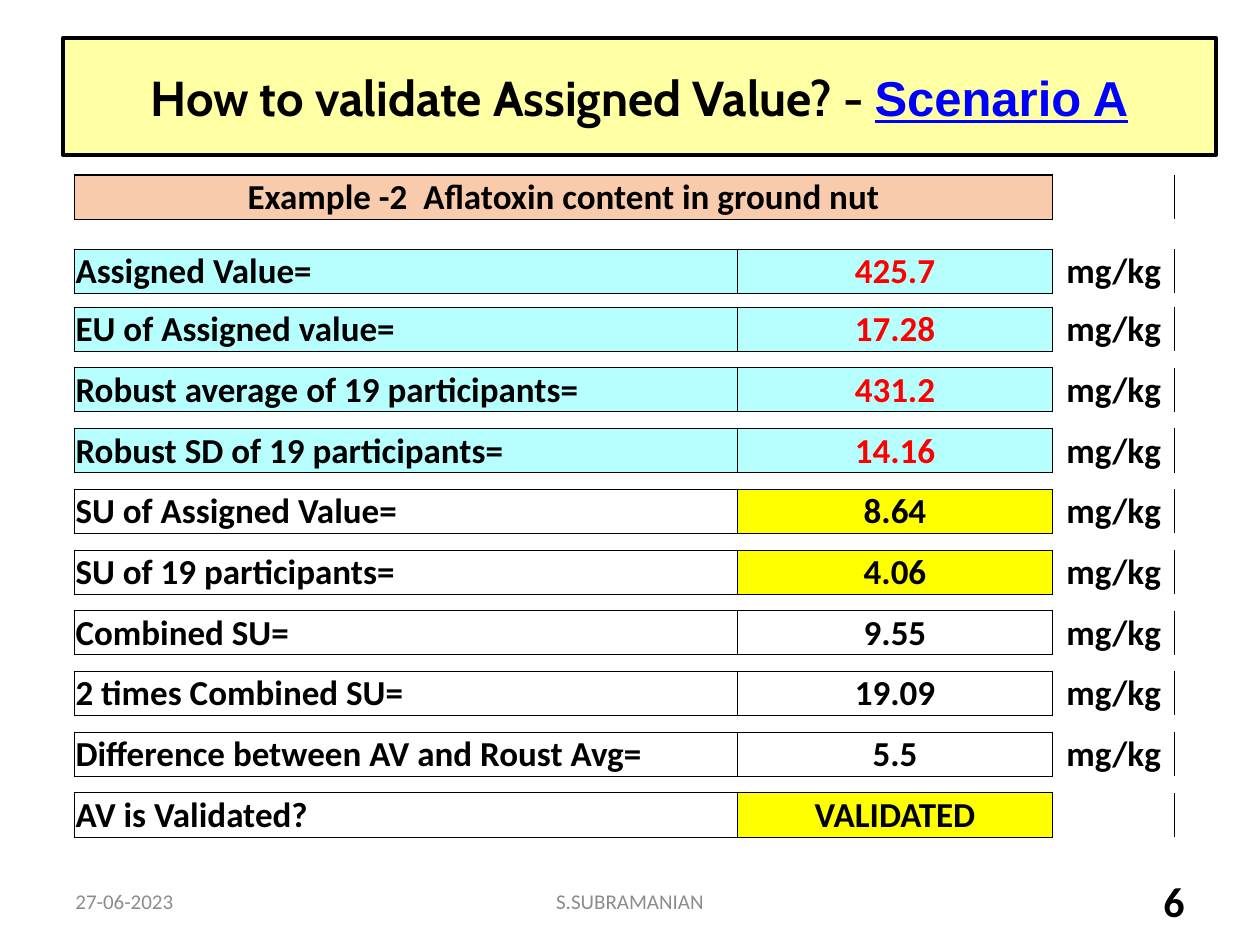
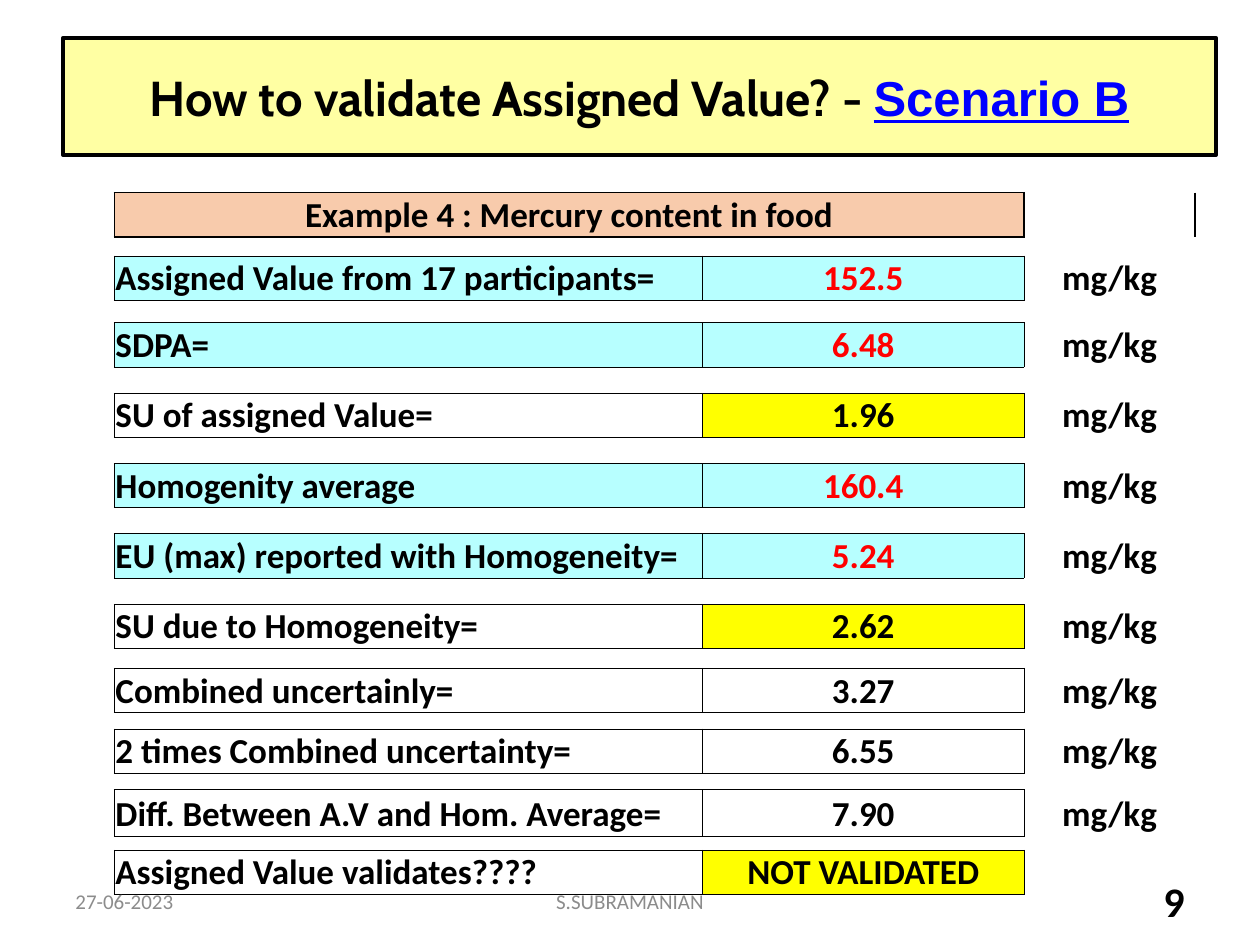
from dataclasses import dataclass

from lxml import etree
from pptx import Presentation
from pptx.dml.color import RGBColor
from pptx.enum.text import MSO_ANCHOR, MSO_AUTO_SIZE, PP_ALIGN
from pptx.oxml.ns import qn
from pptx.util import Pt

LEFT, CENTER, RIGHT = PP_ALIGN.LEFT, PP_ALIGN.CENTER, PP_ALIGN.RIGHT
MIDDLE, BOTTOM = MSO_ANCHOR.MIDDLE, MSO_ANCHOR.BOTTOM
NO_AUTOFIT = MSO_AUTO_SIZE.NONE
TITLE_ONLY_LAYOUT = 5
PLAIN_TABLE_STYLE = "{2D5ABB26-0587-4C30-8999-92F81FD0307C}"
UNIT = "mg/kg"


@dataclass(frozen=True)
class Theme:
    black: str = "000000"
    white: str = "FFFFFF"
    red: str = "FF0000"
    link_blue: str = "0000FF"
    footer_grey: str = "8C8C8C"
    title_fill: str = "FFFFA3"
    example_fill: str = "F8CBAC"
    given_fill: str = "B7FFFF"
    result_fill: str = "FFFF00"
    title_font: str = "Cabin"
    scenario_font: str = "Arial"
    body_font: str = "Calibri"
    title_size: float = 28
    number_size: float = 24
    table_size: float = 20
    footer_size: float = 12
    spacer_size: float = 4
    title_line: float = 2.25
    example_line: float = 1
    cell_line: float = 0.5


THEME = Theme()
ROW_STYLES = {
    "given": (THEME.given_fill, THEME.given_fill, THEME.red),
    "result": (THEME.white, THEME.result_fill, THEME.black),
    "plain": (THEME.white, THEME.white, THEME.black),
}
TITLE_BOX = (36, 21.6, 658.8, 67)
FOOTER_BOX = (36, 500.4, 648, 28.8)
ROW_HEIGHT = 24.8


@dataclass(frozen=True)
class Scenario:
    name: str
    number: str
    example: str
    origin: tuple
    column_widths: tuple
    gaps: tuple
    rows: tuple
    row_heights: dict


SCENARIOS = (
    Scenario(
        name="Scenario A",
        number="6",
        example="Example -2  Aflatoxin content in ground nut",
        origin=(42.5, 100.1),
        column_widths=(42.5, 113.8, 85.7, 54, 83, 180, 69.8),
        gaps=(17, 8) + (9.5,) * 8,
        rows=(
            ("given", "Assigned Value=", "425.7", UNIT),
            ("given", "EU of Assigned value=", "17.28", UNIT),
            ("given", "Robust average of 19 participants=", "431.2", UNIT),
            ("given", "Robust SD of 19 participants=", "14.16", UNIT),
            ("result", "SU of Assigned Value=", "8.64", UNIT),
            ("result", "SU of 19 participants=", "4.06", UNIT),
            ("plain", "Combined SU=", "9.55", UNIT),
            ("plain", "2 times Combined SU=", "19.09", UNIT),
            ("plain", "Difference between AV and Roust Avg=", "5.5", UNIT),
            ("result", "AV is Validated?", "VALIDATED", ""),
        ),
        row_heights={},
    ),
    Scenario(
        name="Scenario B",
        number="9",
        example="Example 4 : Mercury content in food",
        origin=(65.3, 110.1),
        column_widths=(336.2, 183.6, 97.9),
        gaps=(11, 13, 15, 15, 15, 15, 11.5, 9.5, 9.5, 8),
        rows=(
            ("given", "Assigned Value from 17 participants=", "152.5", UNIT),
            ("given", "SDPA=", "6.48", UNIT),
            ("result", "SU of assigned Value=", "1.96", UNIT),
            ("given", "Homogenity average", "160.4", UNIT),
            ("given", "EU (max) reported with Homogeneity=", "5.24", UNIT),
            ("result", "SU due to Homogeneity=", "2.62", UNIT),
            ("plain", "Combined uncertainly=", "3.27", UNIT),
            ("plain", "2 times Combined uncertainty=", "6.55", UNIT),
            ("plain", "Diff. Between A.V and Hom. Average=", "7.90", UNIT),
            ("result", "Assigned Value validates????", "NOT VALIDATED", ""),
        ),
        row_heights={8: 26.5},
    ),
)


def color(value):
    return RGBColor.from_string(value)


def format_run(run, font, size, text_color, bold=True, underline=None):
    run.font.name = font
    run.font.size = Pt(size)
    run.font.color.rgb = color(text_color)
    run.font.bold = bold
    run.font.underline = underline


def add_title(slide, box, scenario_name):
    title = slide.shapes.title
    title.left, title.top, title.width, title.height = map(Pt, box)
    title.fill.solid()
    title.fill.fore_color.rgb = color(THEME.title_fill)
    title.line.color.rgb = color(THEME.black)
    title.line.width = Pt(THEME.title_line)
    title.text_frame.auto_size = NO_AUTOFIT
    title.text_frame.vertical_anchor = MIDDLE
    title.text_frame.text = "How to validate Assigned Value? - "
    paragraph = title.text_frame.paragraphs[0]
    paragraph.alignment = CENTER
    format_run(paragraph.runs[0], THEME.title_font, THEME.title_size, THEME.black)
    scenario_run = paragraph.add_run()
    scenario_run.text = scenario_name
    format_run(scenario_run, THEME.scenario_font, THEME.title_size,
               THEME.link_blue, underline=True)


def add_footer(slide, box, number):
    left, top, width, height = box
    side = 168
    middle = 228
    grey = (THEME.footer_size, THEME.footer_grey, False)
    parts = (
        ("27-06-2023", 0, side, LEFT, grey),
        ("S.SUBRAMANIAN", (width - middle) / 2, middle, CENTER, grey),
        (number, width - side, side, RIGHT, (THEME.number_size, THEME.black, True)),
    )
    for text, offset, part_width, alignment, style in parts:
        shape = slide.shapes.add_textbox(Pt(left + offset), Pt(top), Pt(part_width), Pt(height))
        shape.text_frame.word_wrap = True
        shape.text_frame.vertical_anchor = MIDDLE
        shape.text_frame.text = text
        paragraph = shape.text_frame.paragraphs[0]
        paragraph.alignment = alignment
        format_run(paragraph.runs[0], THEME.body_font, *style)


def set_cell(cell, fill, borders, text="", text_color=THEME.black, alignment=CENTER):
    cell.margin_left = cell.margin_right = cell.margin_top = Pt(0.7 if text else 0)
    cell.margin_bottom = 0
    cell.vertical_anchor = BOTTOM
    properties = cell._tc.get_or_add_tcPr()
    for side in "LRTB":
        if side in borders:
            line = etree.SubElement(properties, qn(f"a:ln{side}"), w=str(Pt(borders[side])))
            line_fill = etree.SubElement(line, qn("a:solidFill"))
            etree.SubElement(line_fill, qn("a:srgbClr"), val=THEME.black)
    cell.fill.solid()
    cell.fill.fore_color.rgb = color(fill)
    paragraph = cell.text_frame.paragraphs[0]
    if text:
        paragraph.text = text
        paragraph.alignment = alignment
        format_run(paragraph.runs[0], THEME.body_font, THEME.table_size, text_color)
    else:
        etree.SubElement(paragraph._p, qn("a:endParaRPr"), sz=str(THEME.spacer_size * 100))


def fill_example_row(table, unit_column, example):
    outline = dict.fromkeys("LRTB", THEME.example_line)
    table.cell(0, 0).merge(table.cell(0, unit_column - 1))
    for column in range(unit_column):
        set_cell(table.cell(0, column), THEME.example_fill, outline,
                 example if column == 0 else "")
    set_cell(table.cell(0, unit_column), THEME.white, {"L": THEME.example_line})


def fill_spacer_row(table, row, unit_column):
    top_line = THEME.example_line if row == 1 else THEME.cell_line
    for column in range(unit_column):
        set_cell(table.cell(row, column), THEME.white, {"T": top_line, "B": THEME.cell_line})
    set_cell(table.cell(row, unit_column), THEME.white, {})


def fill_value_row(table, row, unit_column, entry):
    kind, label, value, unit = entry
    label_fill, value_fill, value_color = ROW_STYLES[kind]
    outline = dict.fromkeys("LRTB", THEME.cell_line)
    value_column = unit_column - 1
    if value_column > 1:
        table.cell(row, 0).merge(table.cell(row, value_column - 1))
    for column in range(value_column):
        set_cell(table.cell(row, column), label_fill, outline,
                 label if column == 0 else "", alignment=LEFT)
    set_cell(table.cell(row, value_column), value_fill, outline, value, value_color)
    set_cell(table.cell(row, unit_column), THEME.white, {"L": THEME.cell_line}, unit)


def add_validation_table(slide, scenario):
    heights = [ROW_HEIGHT]
    for index, gap in enumerate(scenario.gaps):
        heights += [gap, scenario.row_heights.get(index, ROW_HEIGHT)]
    widths = scenario.column_widths
    left, top = scenario.origin
    frame = slide.shapes.add_table(len(heights), len(widths), Pt(left), Pt(top),
                                   Pt(sum(widths)), Pt(sum(heights)))
    table = frame.table
    table.first_row = table.horz_banding = False
    table._tbl.tblPr.find(qn("a:tableStyleId")).text = PLAIN_TABLE_STYLE
    for column, width in zip(table.columns, widths):
        column.width = Pt(width)
    for row, height in zip(table.rows, heights):
        row.height = Pt(height)

    unit_column = len(widths) - 1
    fill_example_row(table, unit_column, scenario.example)
    for index, entry in enumerate(scenario.rows):
        fill_spacer_row(table, 2 * index + 1, unit_column)
        fill_value_row(table, 2 * index + 2, unit_column, entry)


def add_scenario_slide(presentation, scenario):
    slide = presentation.slides.add_slide(presentation.slide_layouts[TITLE_ONLY_LAYOUT])
    add_title(slide, TITLE_BOX, scenario.name)
    add_validation_table(slide, scenario)
    add_footer(slide, FOOTER_BOX, scenario.number)


def main():
    presentation = Presentation()
    presentation.slide_width, presentation.slide_height = Pt(720), Pt(540)
    for scenario in SCENARIOS:
        add_scenario_slide(presentation, scenario)
    presentation.save("out.pptx")


if __name__ == "__main__":
    main()
